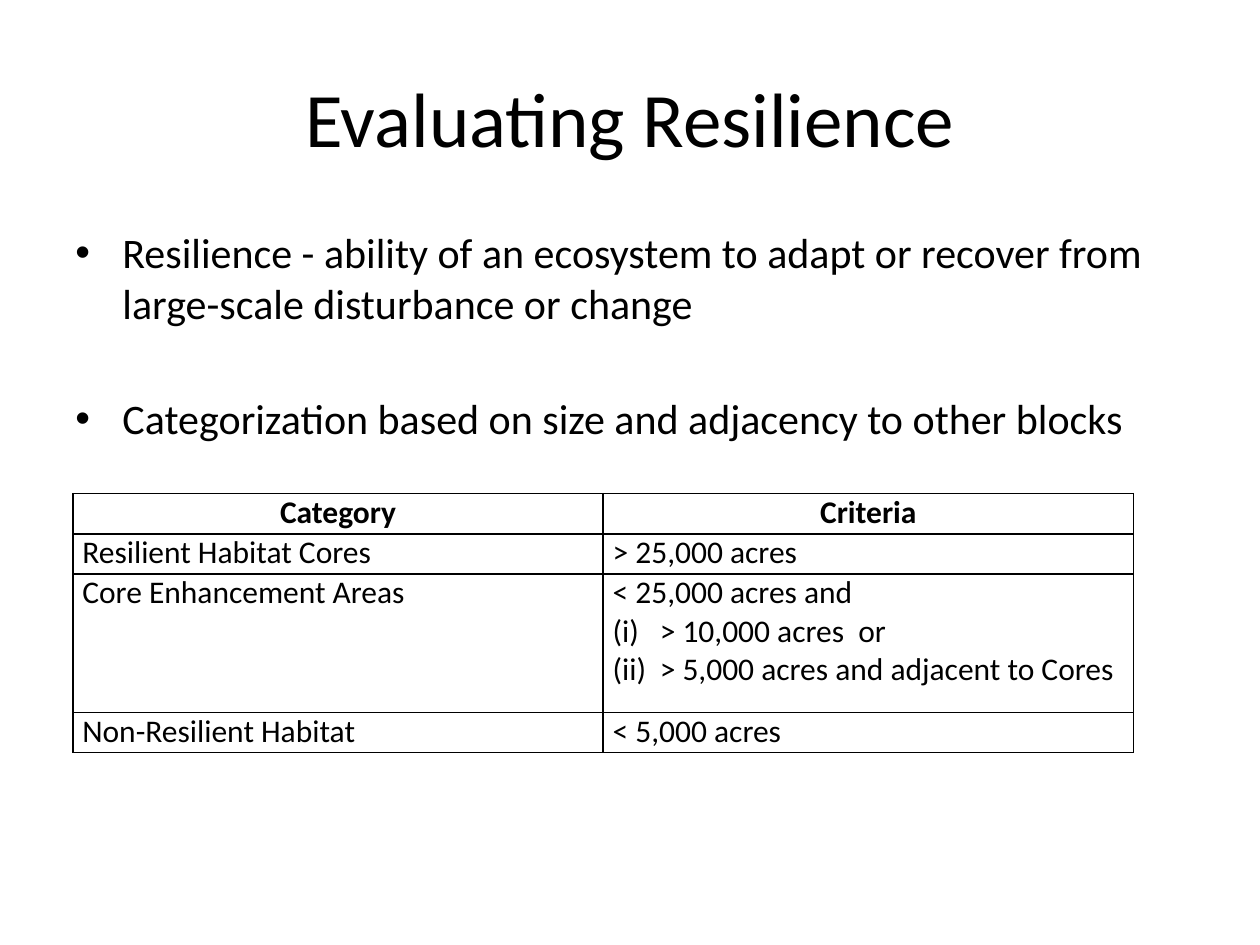
"""Build the slide on evaluating ecosystem resilience."""
from lxml import etree
from pptx import Presentation
from pptx.dml.color import RGBColor
from pptx.enum.text import MSO_ANCHOR, PP_ALIGN
from pptx.oxml.ns import qn
from pptx.util import Cm, Pt

BLACK = RGBColor(0, 0, 0)
CENTER = PP_ALIGN.CENTER
LEFT = PP_ALIGN.LEFT
MIDDLE = MSO_ANCHOR.MIDDLE
TOP = MSO_ANCHOR.TOP
FONT = "Calibri"
HANGING = Cm(0.95)

TITLE = "Evaluating Resilience"
POINTS = [
    "Resilience - ability of an ecosystem to adapt or recover from "
    "large-scale disturbance or change",
    "Categorization based on size and adjacency to other blocks",
]
CRITERIA = [
    ("Category", ["Criteria"]),
    ("Resilient Habitat Cores", ["> 25,000 acres"]),
    ("Core Enhancement Areas",
     ["< 25,000 acres and", "> 10,000 acres  or", "> 5,000 acres and adjacent to Cores"]),
    ("Non-Resilient Habitat", ["< 5,000 acres"]),
]
OPEN_ROWS = 2
ROW_HEIGHTS = [0.89, 0.81, 0.81, 0.81, 2.79, 0.81]


class SlideWriter:
    """Hold the current slide and the style shared by its elements."""

    def __init__(self, slide):
        self.slide = slide

    def run(self, paragraph, text, size, bold=False):
        run = paragraph.add_run()
        run.text = text
        run.font.name = FONT
        run.font.size = Pt(size)
        run.font.bold = bold
        run.font.color.rgb = BLACK

    def marker(self, paragraph, tag, **attributes):
        properties = paragraph._p.get_or_add_pPr()
        properties.set("marL", str(HANGING))
        properties.set("indent", str(-HANGING))
        if tag == "a:buChar":
            etree.SubElement(properties, qn("a:buFont"), typeface="Arial")
        etree.SubElement(properties, qn(tag), **attributes)

    def frame(self, left, top, width, height, anchor):
        frame = self.slide.shapes.add_textbox(
            Cm(left), Cm(top), Cm(width), Cm(height)).text_frame
        frame.word_wrap = True
        frame.vertical_anchor = anchor
        return frame

    def title(self, text):
        heading = self.frame(1.27, 0.76, 22.86, 3.18, MIDDLE).paragraphs[0]
        heading.alignment = CENTER
        self.run(heading, text, 44)

    def bullets(self, points):
        body = self.frame(1.27, 4.45, 22.86, 12.57, TOP)
        for index, point in enumerate(points):
            paragraph = body.add_paragraph() if index else body.paragraphs[0]
            paragraph.space_before = Pt(37 if index else 0)
            self.marker(paragraph, "a:buChar", char="•")
            self.run(paragraph, point, 24)

    def borders(self, cell, sides):
        properties = cell._tc.get_or_add_tcPr()
        for side in "LRTB":
            line = etree.SubElement(properties, qn(f"a:ln{side}"), w=str(Pt(1)))
            if side in sides:
                fill = etree.SubElement(line, qn("a:solidFill"))
                etree.SubElement(fill, qn("a:srgbClr"), val=str(BLACK))
            else:
                etree.SubElement(line, qn("a:noFill"))

    def cell(self, cell, lines, header):
        for index, text in enumerate(lines):
            paragraph = cell.text_frame.add_paragraph() if index else cell.text_frame.paragraphs[0]
            paragraph.alignment = CENTER if header else LEFT
            if index:
                self.marker(paragraph, "a:buAutoNum", type="romanLcParenBoth")
            self.run(paragraph, text, 18, header)

    def table(self, entries):
        table = self.slide.shapes.add_table(
            len(ROW_HEIGHTS), 2, Cm(1.47), Cm(8.25), Cm(21.38), Cm(sum(ROW_HEIGHTS))).table
        table.first_row = table.horz_banding = False
        for row, height in zip(table.rows, ROW_HEIGHTS):
            row.height = Cm(height)
        for row_index, row in enumerate(table.rows):
            for cell in row.cells:
                cell.margin_left = cell.margin_right = Cm(0.19)
                cell.margin_top = cell.margin_bottom = 0
                edges = "LRTB" if row_index >= OPEN_ROWS else "B" * (row_index == OPEN_ROWS - 1)
                self.borders(cell, edges)
                cell.fill.background()
        table.cell(0, 0).merge(table.cell(0, 1))
        for index, (category, criteria) in enumerate(entries):
            row = OPEN_ROWS + index
            self.cell(table.cell(row, 0), [category], index == 0)
            self.cell(table.cell(row, 1), criteria, index == 0)


def main():
    presentation = Presentation()
    presentation.slide_width = Cm(25.4)
    presentation.slide_height = Cm(19.05)
    writer = SlideWriter(presentation.slides.add_slide(presentation.slide_layouts[6]))
    writer.title(TITLE)
    writer.bullets(POINTS)
    writer.table(CRITERIA)
    presentation.save("out.pptx")


if __name__ == "__main__":
    main()
